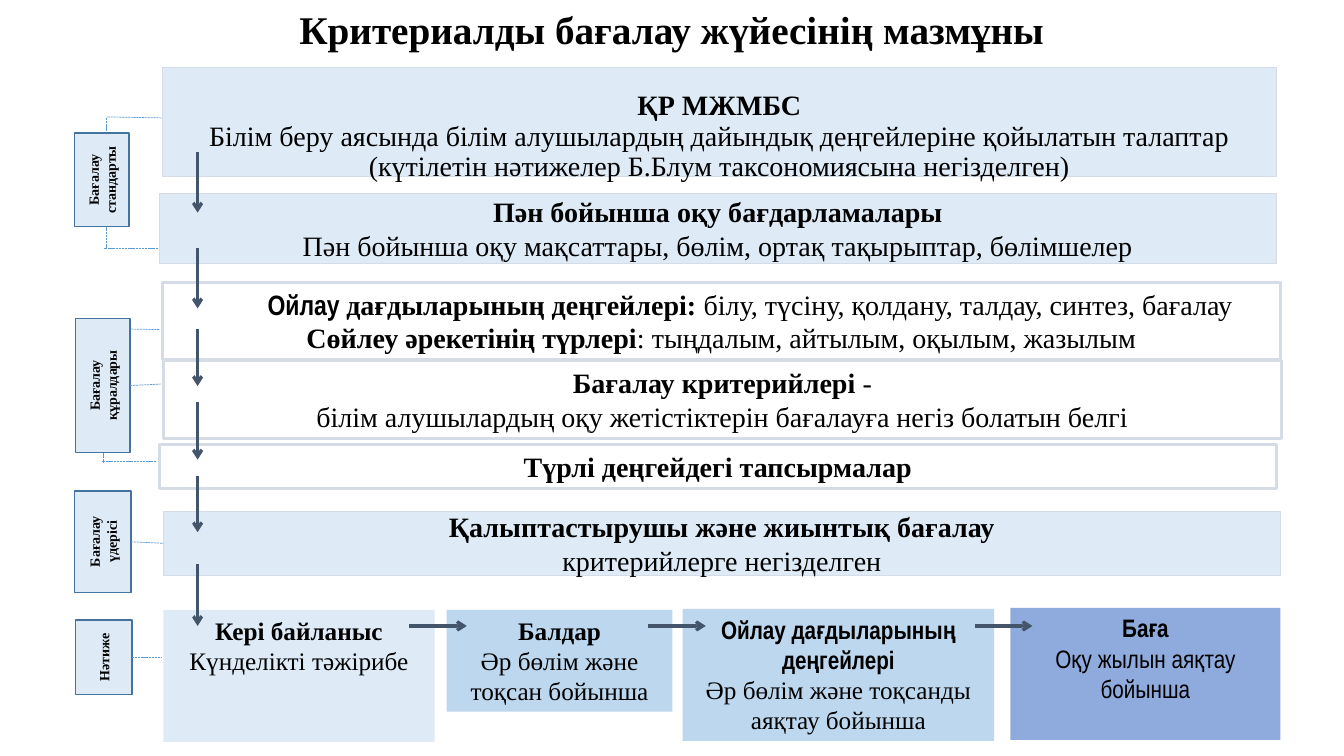
import pptx
import pptx.util
import pptx.dml.color
import pptx.enum.dml
import pptx.enum.shapes
import pptx.enum.text
import pptx.oxml
import lxml.etree

Inches = pptx.util.Inches
Pt = pptx.util.Pt
RGBColor = pptx.dml.color.RGBColor
ANCHOR = pptx.enum.text.MSO_ANCHOR

BLACK = RGBColor(0x00, 0x00, 0x00)
PALE_BLUE = RGBColor(0xDE, 0xEB, 0xF7)
LIGHT_BLUE = RGBColor(0xBD, 0xD7, 0xEE)
MID_BLUE = RGBColor(0x8F, 0xAA, 0xDC)
PANEL_EDGE = RGBColor(0xD6, 0xDC, 0xE5)
LABEL_EDGE = RGBColor(0x43, 0x73, 0x9E)
BRACKET = RGBColor(0x5B, 0x9B, 0xD5)
ARROW = RGBColor(0x44, 0x54, 0x6A)
SERIF = "Times New Roman"
NARROW = "Arial Narrow"

deck = pptx.Presentation()
deck.slide_width = Inches(13.33)
deck.slide_height = Inches(7.5)
slide = deck.slides.add_slide(deck.slide_layouts[5])


def add_panel(place, paragraphs, size, fill=None, edge=None, edge_width=0.5,
              anchor=ANCHOR.MIDDLE, panel=None):
    """Fill a box with centred paragraphs of (text, bold, font) runs."""
    if panel is None:
        panel = slide.shapes.add_shape(
            pptx.enum.shapes.MSO_SHAPE.RECTANGLE, *map(Inches, place))
        panel.shadow.inherit = False
    else:
        panel.left, panel.top, panel.width, panel.height = map(Inches, place)
    if fill is None:
        panel.fill.background()
    else:
        panel.fill.solid()
        panel.fill.fore_color.rgb = fill
    if edge is None:
        panel.line.fill.background()
    else:
        panel.line.color.rgb = edge
        panel.line.width = Pt(edge_width)
    frame = panel.text_frame
    frame.word_wrap = True
    frame.auto_size = pptx.enum.text.MSO_AUTO_SIZE.NONE
    frame.vertical_anchor = anchor
    for index, runs in enumerate(paragraphs):
        line = frame.add_paragraph() if index else frame.paragraphs[0]
        line.alignment = pptx.enum.text.PP_ALIGN.CENTER
        for text, bold, font in runs:
            run = line.add_run()
            run.text = text
            for name, value in {"name": font, "size": Pt(size), "bold": bold}.items():
                setattr(run.font, name, value)
            run.font.color.rgb = BLACK
    return panel


def add_line(x1, y1, x2, y2, color, width, arrow=False):
    """Draw a solid arrow or a dashed bracket line."""
    line = slide.shapes.add_connector(
        pptx.enum.shapes.MSO_CONNECTOR.STRAIGHT, *map(Inches, (x1, y1, x2, y2)))
    line.line.color.rgb = color
    line.line.width = Pt(width)
    if arrow:
        tail = lxml.etree.SubElement(line.line._get_or_add_ln(), pptx.oxml.ns.qn("a:tailEnd"))
        tail.set("type", "arrow")
    else:
        line.line.dash_style = pptx.enum.dml.MSO_LINE.SQUARE_DOT
    lxml.etree.SubElement(line.element.spPr, pptx.oxml.ns.qn("a:effectLst"))
    return line


# Heading
add_panel((0.66, 0.01, 12, 0.55),
          [[("Критериалды бағалау жүйесінің мазмұны", True, SERIF)]],
          28, panel=slide.shapes.title)

# State standard
standard = add_panel(
    (1.61, 0.67, 11.05, 1.08),
    [[("ҚР МЖМБС", True, SERIF)],
     [("Білім беру аясында білім алушылардың дайындық деңгейлеріне қойылатын талаптар "
       "(күтілетін нәтижелер Б.Блум таксономиясына негізделген)", False, SERIF)]],
    20, PALE_BLUE, PANEL_EDGE, anchor=ANCHOR.TOP)
standard.text_frame.margin_top = Inches(0.24)
standard.text_frame.margin_bottom = 0
for paragraph in standard.text_frame.paragraphs:
    paragraph.line_spacing = 0.9

# Filled rows
add_panel((1.58, 1.92, 11.08, 0.69),
          [[("Пән бойынша оқу бағдарламалары", True, SERIF)],
           [("Пән бойынша оқу мақсаттары, бөлім, ортақ тақырыптар, бөлімшелер", False, SERIF)]],
          20, PALE_BLUE, PANEL_EDGE)
process = add_panel((1.62, 5.07, 11.08, 0.64),
                    [[("Қалыптастырушы және жиынтық бағалау", True, SERIF)],
                     [("критерийлерге негізделген", False, SERIF)]],
                    20, PALE_BLUE, PANEL_EDGE)

# Outlined rows
outlined_rows = [
    ((1.61, 2.8, 11.09, 0.77),
     [[("Ойлау ", True, NARROW), ("дағдыларының деңгейлері: ", True, SERIF),
       ("білу, түсіну, қолдану, талдау, синтез, бағалау", False, SERIF)],
      [("Сөйлеу әрекетінің түрлері", True, SERIF),
       (": тыңдалым, айтылым, оқылым, жазылым", False, SERIF)]]),
    ((1.62, 3.58, 11.09, 0.77),
     [[("Бағалау критерийлері ", True, SERIF), ("-", False, SERIF)],
      [("білім алушылардың оқу жетістіктерін бағалауға негіз болатын белгі", False, SERIF)]]),
    ((1.58, 4.41, 11.08, 0.44),
     [[("Түрлі деңгейдегі тапсырмалар", True, SERIF)]]),
]
for place, paragraphs in outlined_rows:
    row = add_panel(place, paragraphs, 20, None, PANEL_EDGE, 2.25, ANCHOR.TOP)
    if place[1] == 2.8:
        thinking = row.text_frame.paragraphs[0]
        thinking._p.get_or_add_pPr().set("marL", str(Inches(0.57)))

# Results
results = [
    ((1.62, 6.05, 2.69, 1.31), PALE_BLUE,
     ("Кері байланыс", SERIF), ("Күнделікті тәжірибе", SERIF)),
    ((4.43, 6.05, 2.24, 1.01), LIGHT_BLUE,
     ("Балдар", SERIF), ("Әр бөлім және тоқсан бойынша", SERIF)),
    ((6.77, 6.04, 3.09, 1.31), LIGHT_BLUE,
     ("Ойлау дағдыларының деңгейлері", NARROW), ("Әр бөлім және тоқсанды аяқтау бойынша", SERIF)),
    ((10.02, 6.03, 2.68, 1.31), MID_BLUE,
     ("Баға", NARROW), ("Оқу жылын аяқтау бойынша", NARROW)),
]
for place, fill, (heading, heading_font), (detail, detail_font) in results:
    add_panel(place, [[(heading, True, heading_font)], [(detail, False, detail_font)]],
              18, fill, anchor=ANCHOR.TOP)

# Dashed brackets behind the stage labels
for bracket in [
    (1.6, 1.17, 1.06, 1.16), (1.57, 2.46, 1.03, 2.46), (1.05, 1.17, 1.05, 2.46),
    (1.58, 3.27, 1.04, 3.26), (1.55, 4.58, 1.01, 4.58), (1.03, 3.62, 1.03, 4.59),
]:
    add_line(*bracket, BRACKET, 0.5)

# Stage labels, with a dashed link from the middle of the right side
stages = [
    ("Бағалау стандарты", (0.74, 1.32, 0.54, 0.93), None),
    ("Бағалау құралдары", (0.75, 3.16, 0.54, 1.33), 3.81),
    ("Бағалау үдерісі", (0.74, 4.87, 0.56, 1.01), 5.38),
    ("Нәтиже", (0.75, 6.15, 0.56, 0.74), 6.52),
]
for stage, place, link_y in stages:
    label = add_panel(place, [[(stage, True, SERIF)]], 10, PALE_BLUE, LABEL_EDGE, 1)
    label.element.txBody.bodyPr.set("vert", "vert270")
    if link_y:
        link = add_line(1.3, link_y, 1.6, link_y, BRACKET, 0.5)
        link.begin_connect(label, 3)
        if stage == "Бағалау үдерісі":
            link.end_connect(process, 1)

# Arrows down the rows
for start, end in [(1.51, 2.11), (2.46, 3.06), (3.26, 3.83),
                   (3.99, 4.56), (4.72, 5.28), (5.6, 6.21)]:
    add_line(1.96, start, 1.96, end, ARROW, 2.25, arrow=True)

# Arrows between the results
for start in (4.06, 6.43, 9.67):
    add_line(start, 6.21, start + 0.57, 6.21, ARROW, 2.25, arrow=True)

deck.save("out.pptx")
